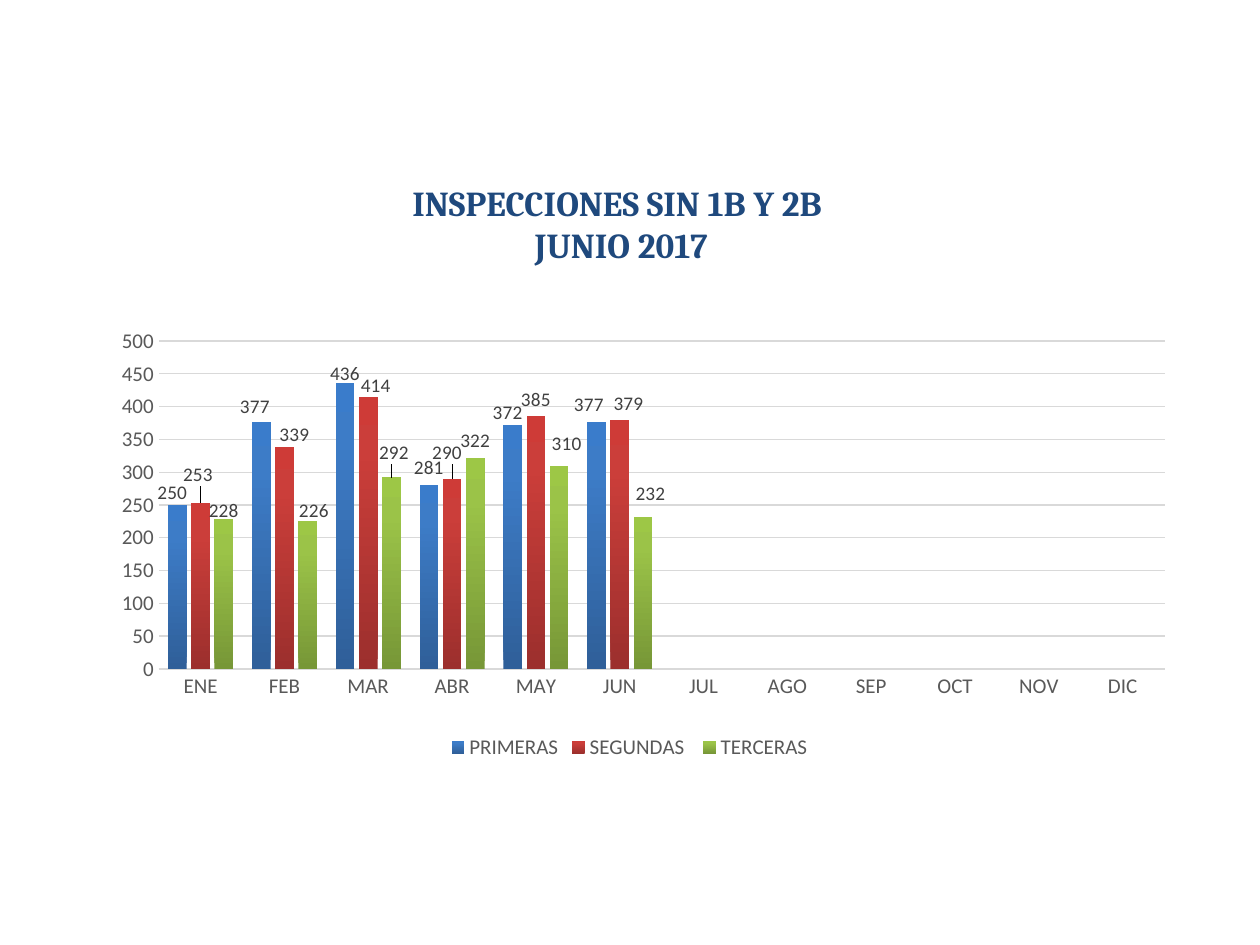
"""Build the slide with the monthly inspections column chart."""
import pptx
import pptx.chart.data
import pptx.dml.color
import pptx.enum.chart
import pptx.enum.text
import pptx.oxml
import pptx.oxml.ns
import pptx.util

Inches = pptx.util.Inches
Pt = pptx.util.Pt
RGBColor = pptx.dml.color.RGBColor
qn = pptx.oxml.ns.qn

NAVY = RGBColor(0x1F, 0x49, 0x7D)
BLACK = RGBColor(0x00, 0x00, 0x00)
DARK_GRAY = RGBColor(0x40, 0x40, 0x40)
MID_GRAY = RGBColor(0x59, 0x59, 0x59)
LIGHT_GRAY = RGBColor(0xD9, 0xD9, 0xD9)

TITLE = "INSPECCIONES SIN 1B Y 2B \nJUNIO 2017"
TITLE_BOX = (1.14, 1.39, 7.58, 1.11)
CHART_BOX = (0.75, 2.53, 8.5, 3.54)
PLOT_BOX = {"x": 0.06, "y": 0.05, "w": 0.94, "h": 0.735}
MONTHS = ["ENE", "FEB", "MAR", "ABR", "MAY", "JUN",
          "JUL", "AGO", "SEP", "OCT", "NOV", "DIC"]
GRADIENT_POSITIONS = (0, 80, 100)
SERIES = [
    {"name": "PRIMERAS", "values": [250, 377, 436, 281, 372, 377],
     "colors": ("2F5F99", "3D7CC7", "3A7CCB"),
     "label_shifts": {0: (-0.04, 0.04), 1: (-0.05, 0.02), 2: (0, 0.06),
                      4: (-0.04, 0.04), 5: (-0.06, 0)}},
    {"name": "SEGUNDAS ", "values": [253, 339, 414, 290, 385, 379],
     "colors": ("9C2F2D", "CB3E3A", "CE3B37"),
     "label_shifts": {0: (-0.02, -0.09), 1: (0.08, 0.04), 2: (0.06, 0.04),
                      3: (-0.04, -0.07), 5: (0.07, 0)}},
    {"name": "TERCERAS", "values": [228, 226, 292, 322, 310, 232],
     "colors": ("779737", "9BC348", "9DC746"),
     "label_shifts": {0: (0, 0.07), 1: (0.05, 0.06), 2: (0.02, -0.06),
                      4: (0.06, -0.04), 5: (0.06, -0.05)}},
]


def style_font(font, size, color, name="Calibri", bold=False):
    font.size = Pt(size)
    font.name = name
    font.bold = bold
    font.color.rgb = color


def manual_layout(values, inner=False):
    target = '<c:layoutTarget val="inner"/>' if inner else ""
    modes = '<c:xMode val="edge"/><c:yMode val="edge"/>' if inner else ""
    sizes = "".join(f'<c:{key} val="{value}"/>' for key, value in values.items())
    return pptx.oxml.parse_xml(
        f'<c:layout {pptx.oxml.ns.nsdecls("c")}><c:manualLayout>'
        f"{target}{modes}{sizes}</c:manualLayout></c:layout>")


def replace_layout(parent, index, layout):
    for old_layout in parent.findall(qn("c:layout")):
        parent.remove(old_layout)
    parent.insert(index, layout)


def fill_gradient(series, colors):
    stops = "".join(
        f'<a:gs pos="{position * 1000}"><a:srgbClr val="{color}"/></a:gs>'
        for position, color in zip(GRADIENT_POSITIONS, colors))
    series.format.fill.background()
    properties = series.format.fill._xPr
    properties.replace(properties.find(qn("a:noFill")), pptx.oxml.parse_xml(
        f'<a:gradFill {pptx.oxml.ns.nsdecls("a")} rotWithShape="1"><a:gsLst>{stops}</a:gsLst>'
        '<a:lin ang="16200000" scaled="0"/></a:gradFill>'))


def style_labels(series, shifts):
    outside = pptx.enum.chart.XL_LABEL_POSITION.OUTSIDE_END
    labels = series.data_labels
    labels.show_value = True
    labels.position = outside
    style_font(labels.font, 11, DARK_GRAY)
    for index in shifts:
        label = series.points[index].data_label
        style_font(label.font, 11, DARK_GRAY)
        label.position = outside
    for element in labels._element.findall(qn("c:dLbl")):
        x, y = shifts[int(element.find(qn("c:idx")).get("val"))]
        shift = {"x": round(x / CHART_BOX[2], 4), "y": round(y / CHART_BOX[3], 4)}
        replace_layout(element, 1, manual_layout(shift))


def add_title(slide):
    title = slide.shapes.title
    title.left, title.top, title.width, title.height = map(Inches, TITLE_BOX)
    frame = title.text_frame
    frame.text = TITLE
    frame.word_wrap = True
    frame.vertical_anchor = pptx.enum.text.MSO_ANCHOR.TOP
    frame.auto_size = pptx.enum.text.MSO_AUTO_SIZE.SHAPE_TO_FIT_TEXT
    for paragraph in frame.paragraphs:
        paragraph.alignment = pptx.enum.text.PP_ALIGN.CENTER
        for run in paragraph.runs:
            style_font(run.font, 20, NAVY, "Cambria", True)


def style_axes(chart):
    for axis in (chart.category_axis, chart.value_axis):
        axis.major_tick_mark = pptx.enum.chart.XL_TICK_MARK.NONE
        axis.minor_tick_mark = pptx.enum.chart.XL_TICK_MARK.NONE
        style_font(axis.tick_labels.font, 12, MID_GRAY)
    chart.category_axis.format.line.color.rgb = LIGHT_GRAY
    chart.category_axis.format.line.width = Pt(1)
    value_axis = chart.value_axis
    value_axis.minimum_scale, value_axis.maximum_scale, value_axis.major_unit = 0, 500, 50
    value_axis.format.line.fill.background()
    value_axis.has_major_gridlines = True
    value_axis.major_gridlines.format.line.color.rgb = LIGHT_GRAY
    value_axis.major_gridlines.format.line.width = Pt(0.75)


def add_chart(slide):
    data = pptx.chart.data.CategoryChartData()
    data.categories = MONTHS
    for item in SERIES:
        missing = [None] * (len(MONTHS) - len(item["values"]))
        data.add_series(item["name"], item["values"] + missing)
    chart = slide.shapes.add_chart(
        pptx.enum.chart.XL_CHART_TYPE.COLUMN_CLUSTERED, *map(Inches, CHART_BOX), data).chart
    style_font(chart.font, 10, BLACK)
    chart.has_title = False
    chart.has_legend = True
    chart.legend.position = pptx.enum.chart.XL_LEGEND_POSITION.BOTTOM
    chart.legend.include_in_layout = False
    style_font(chart.legend.font, 12, MID_GRAY)
    style_axes(chart)
    plot = chart.plots[0]
    plot.gap_width = 100
    plot.overlap = -24
    plot.vary_by_categories = False
    for series, item in zip(plot.series, SERIES):
        fill_gradient(series, item["colors"])
        style_labels(series, item["label_shifts"])
    plot_area = chart._chartSpace.chart.plotArea
    replace_layout(plot_area, 0, manual_layout(PLOT_BOX, inner=True))


def main():
    presentation = pptx.Presentation()
    presentation.slide_width = Inches(10)
    presentation.slide_height = Inches(7.5)
    slide = presentation.slides.add_slide(presentation.slide_layouts[5])
    add_title(slide)
    add_chart(slide)
    presentation.save("out.pptx")


if __name__ == "__main__":
    main()
